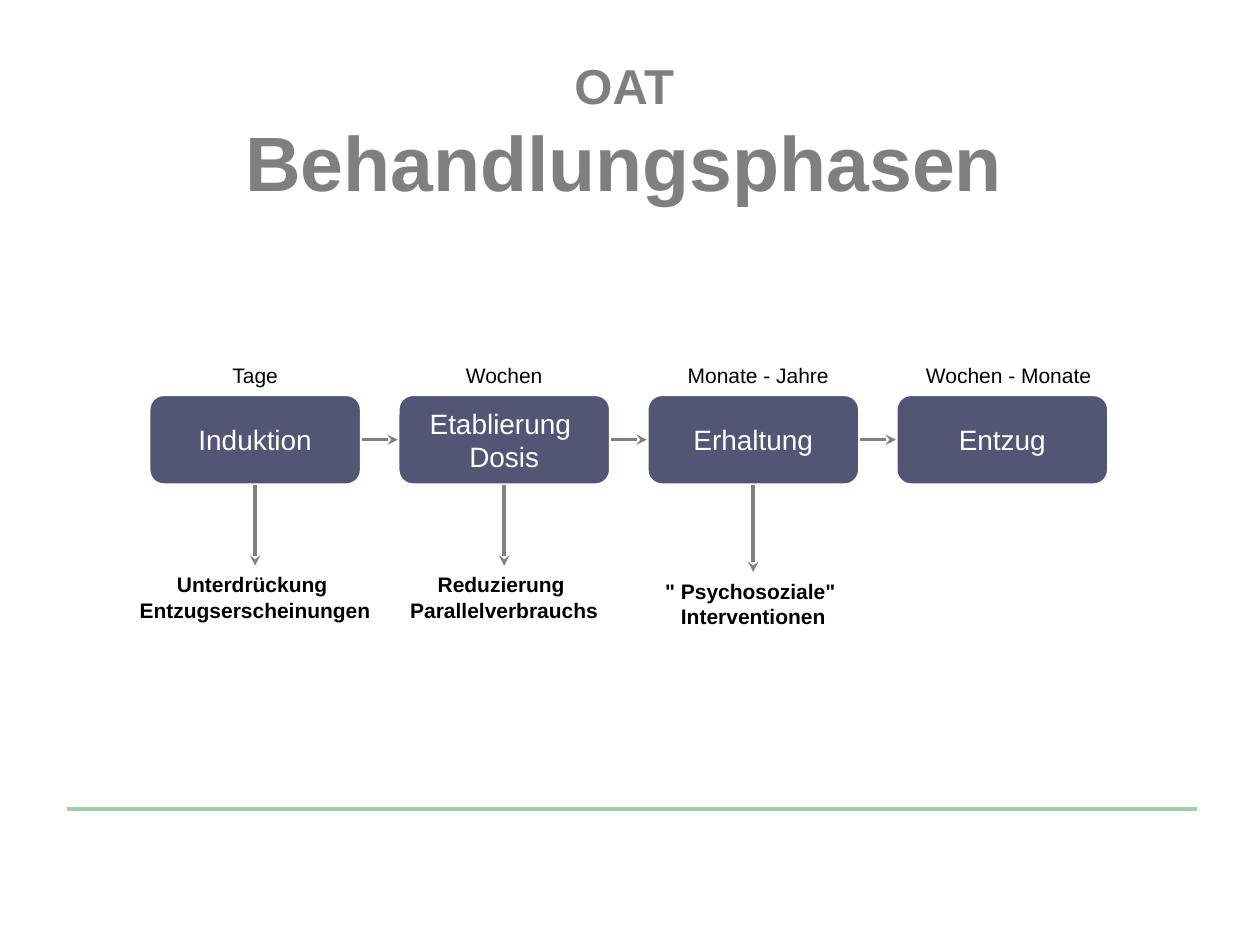
from dataclasses import dataclass

from lxml.etree import SubElement
from pptx import Presentation
from pptx.dml.color import RGBColor as RGB
from pptx.enum.shapes import MSO_CONNECTOR as Link, MSO_SHAPE as Shape
from pptx.enum.text import MSO_ANCHOR as Anchor, PP_ALIGN as Align
from pptx.oxml.ns import qn
from pptx.util import Inches, Pt


@dataclass(frozen=True)
class Theme:
    """Colours, font and type sizes of the slide."""
    font: str = "Arial"
    title: str = "7F7F7F"
    box: str = "525674"
    white: str = "FFFFFF"
    black: str = "000000"
    arrow: str = "808080"
    rule: str = "9FD0AB"
    head: int = 44
    kicker: int = 28
    body: int = 16
    small: int = 12


THEME = Theme()
PHASES = [
    ("Tage", 0, ["Induktion"],
     ["Unterdrückung ", "Entzugserscheinungen"], 1.95, 0.64),
    ("Wochen", 0, ["Etablierung ", "Dosis"],
     ["Reduzierung ", "Parallelverbrauchs"], 1.6, 0.64),
    ("Monate - Jahre", 0.04, ["Erhaltung"],
     ["\" Psychosoziale\" ", "Interventionen"], 1.52, 0.69),
    ("Wochen - Monate", 0.05, ["Entzug"], None, 0, 0),
]


def write(shape, lines, sizes, color, bold=False, wrap=False, inset=0.05, anchor=Anchor.TOP):
    """Fill a shape with centred paragraphs, one size for each line."""
    frame = shape.text_frame
    frame.word_wrap = wrap
    frame.vertical_anchor = anchor
    frame.margin_left = frame.margin_right = Inches(inset)
    frame.margin_top = frame.margin_bottom = Inches(0.05)
    for i, (line, size) in enumerate(zip(lines, sizes)):
        para = frame.paragraphs[0] if i == 0 else frame.add_paragraph()
        para.alignment = Align.CENTER
        run = para.add_run()
        run.text = line
        font = run.font
        font.name, font.size, font.bold = THEME.font, Pt(size), bold
        font.color.rgb = RGB.from_string(color)


def label(slide, box, lines, sizes, color, **style):
    """Add a text box with the given lines."""
    shape = slide.shapes.add_textbox(*map(Inches, box))
    write(shape, lines, sizes, color, **style)
    return shape


def stroke(slide, start, end, color, width):
    """Add a straight line without a shadow."""
    line = slide.shapes.add_connector(Link.STRAIGHT, *map(Inches, (*start, *end)))
    line.line.color.rgb = RGB.from_string(color)
    line.line.width = Pt(width)
    SubElement(line._element.spPr, qn("a:effectLst"))
    return line


def arrow(slide, source, site, target, goal):
    """Join two shapes with a stealth-headed arrow."""
    line = stroke(slide, (0, 0), (1, 1), THEME.arrow, 2)
    line.begin_connect(source, site)
    line.end_connect(target, goal)
    SubElement(line.line._get_or_add_ln(), qn("a:tailEnd"), type="stealth")


def node(slide, box, lines):
    """Add one rounded phase box."""
    shape = slide.shapes.add_shape(Shape.ROUNDED_RECTANGLE, *map(Inches, box))
    shape.shadow.inherit = False
    shape.fill.solid()
    shape.fill.fore_color.rgb = RGB.from_string(THEME.box)
    shape.line.color.rgb = RGB.from_string(THEME.white)
    shape.line.width = Pt(2)
    write(shape, lines, [THEME.body] * len(lines), THEME.white, wrap=True, anchor=Anchor.MIDDLE)
    return shape


def header(slide, box):
    """Place the two-line title."""
    label(slide, box, ["OAT", "Behandlungsphasen"], [THEME.kicker, THEME.head],
          THEME.title, bold=True, inset=0.1)


def flow(slide, box):
    """Lay the phases out in a row with durations above and goals below."""
    left, top, width, height = box
    wide, above = 1.69, 0.3
    pitch = (width - wide) / (len(PHASES) - 1)
    last = None
    for i, (time, shift, name, goal, span, drop) in enumerate(PHASES):
        x = left + i * pitch
        mid = x + wide / 2
        label(slide, (x + shift, top - above, wide, above), [time], [THEME.small], THEME.black)
        phase = node(slide, (x, top, wide, height), name)
        if last is not None:
            arrow(slide, last, 3, phase, 1)
        if goal:
            note = label(slide, (mid - span / 2, top + height + drop, span, 0.5),
                         goal, [THEME.small] * 2, THEME.black, bold=True)
            arrow(slide, phase, 2, note, 0)
        last = phase


def main():
    """Build and save the slide."""
    deck = Presentation()
    deck.slide_width, deck.slide_height = Inches(10), Inches(7.5)
    slide = deck.slides.add_slide(deck.slide_layouts[6])
    stroke(slide, (0.53, 6.42), (9.5, 6.42), THEME.rule, 2.5)
    header(slide, (1.75, 0.39, 6.41, 1.31))
    flow(slide, (1.18, 3.13, 7.62, 0.72))
    deck.save("out.pptx")


if __name__ == "__main__":
    main()
